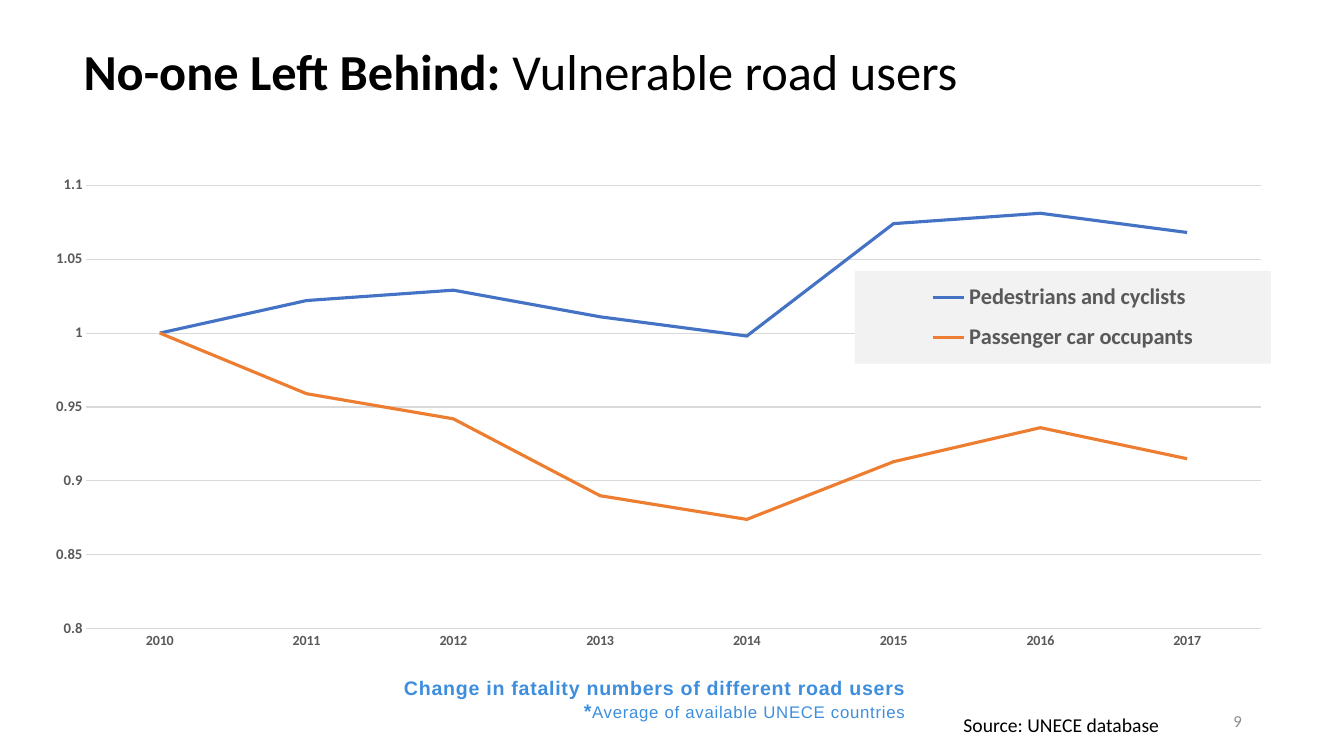
from lxml import etree
from pptx import Presentation
from pptx import util as u
from pptx.chart.data import CategoryChartData
from pptx.dml.color import RGBColor
from pptx.enum import chart as ch
from pptx.enum import text as t
from pptx.oxml.ns import qn

WIDTH, HEIGHT = u.Inches(13.33), u.Inches(7.5)
BLACK, GREY, GRID, BLUE = "000000", "595959", "D9D9D9", "3E8EDE"
YEARS = [str(year) for year in range(2010, 2018)]
ROAD_USERS = [
    ("Pedestrians and cyclists", "4472C4",
     (1, 1.022, 1.029, 1.011, 0.998, 1.074, 1.081, 1.068)),
    ("Passenger car occupants", "ED7D31",
     (1, 0.959, 0.942, 0.89, 0.874, 0.913, 0.936, 0.915)),
]


def color(value):
    return RGBColor.from_string(value)


def place(left, top, width, height):
    """Turn percentages of the slide into lengths."""
    return [int(share * side / 100) for share, side in
            zip((left, top, width, height), (WIDTH, HEIGHT) * 2)]


def set_font(font, size, fill=BLACK, name="Calibri", bold=False):
    font.size, font.name, font.bold = u.Pt(size), name, bold
    font.color.rgb = color(fill)


def add_span(para, text, spacing=0, **style):
    span = para.add_run()
    span.text = text
    set_font(span.font, **style)
    if spacing:
        span.font._element.set("spc", str(int(spacing * 100)))


def add_text(page, area, paragraphs, align="LEFT", anchor="MIDDLE", line=1.0):
    """Each paragraph is a list of (text, format) pairs."""
    frame = page.shapes.add_textbox(*place(*area)).text_frame
    frame.word_wrap = True
    frame.vertical_anchor = t.MSO_ANCHOR[anchor]
    for index, spans in enumerate(paragraphs):
        para = frame.add_paragraph() if index else frame.paragraphs[0]
        para.alignment = t.PP_ALIGN[align]
        para.line_spacing = line
        for text, style in spans:
            add_span(para, text, **style)


def set_layout(element, x, y, w, h, inner=False):
    """Fix the place of a chart part, in shares of the chart."""
    layout = element.find(qn("c:layout"))
    if layout is None:
        layout = etree.Element(qn("c:layout"))
        first = element.find(qn("c:legendPos"))
        element.insert(0 if first is None else 1, layout)
    for child in list(layout):
        layout.remove(child)
    manual = etree.SubElement(layout, qn("c:manualLayout"))
    settings = [("layoutTarget", "inner")] if inner else []
    settings += [("xMode", "edge"), ("yMode", "edge"),
                 ("x", x), ("y", y), ("w", w), ("h", h)]
    for tag, value in settings:
        etree.SubElement(manual, qn("c:" + tag)).set("val", str(value))


def fill_legend(legend, value):
    shape_format = etree.Element(qn("c:spPr"))
    solid = etree.SubElement(shape_format, qn("a:solidFill"))
    etree.SubElement(solid, qn("a:srgbClr")).set("val", value)
    legend.find(qn("c:overlay")).addnext(shape_format)


def set_line(line, value, width):
    line.color.rgb, line.width = color(value), u.Pt(width)


def style_axis(axis, size):
    axis.major_tick_mark = axis.minor_tick_mark = ch.XL_TICK_MARK.NONE
    set_font(axis.tick_labels.font, size, GREY, bold=True)


def add_fatality_chart(page, area):
    data = CategoryChartData()
    data.categories = YEARS
    for name, _, values in ROAD_USERS:
        data.add_series(name, values)
    chart = page.shapes.add_chart(
        ch.XL_CHART_TYPE.LINE, *place(*area), data).chart
    chart.has_title = False
    set_font(chart.font, 10)

    # Lines
    plot = chart.plots[0]
    plot.vary_by_categories = False
    for series, (_, hue, _) in zip(plot.series, ROAD_USERS):
        series.smooth = False
        series.marker.style = ch.XL_MARKER_STYLE.NONE
        set_line(series.format.line, hue, 2.25)
    set_layout(chart._chartSpace.chart.plotArea,
               0.056, 0.037, 0.923, 0.87, inner=True)

    # Axes
    style_axis(chart.category_axis, 10)
    set_line(chart.category_axis.format.line, GRID, 0.75)
    values = chart.value_axis
    style_axis(values, 10.5)
    values.minimum_scale, values.maximum_scale = 0.8, 1.1
    values.major_unit = 0.05
    values.tick_labels.number_format = "General"
    values.tick_labels.number_format_is_linked = False
    values.format.line.fill.background()
    set_line(values.major_gridlines.format.line, GRID, 0.75)

    # Legend
    chart.has_legend = True
    legend = chart.legend
    legend.position = ch.XL_LEGEND_POSITION.BOTTOM
    legend.include_in_layout = True
    set_font(legend.font, 16, GREY, bold=True)
    set_layout(legend._element, 0.66, 0.205, 0.327, 0.182)
    fill_legend(legend._element, "F2F2F2")


def main():
    deck = Presentation()
    deck.slide_width, deck.slide_height = WIDTH, HEIGHT
    page = deck.slides.add_slide(deck.slide_layouts[6])

    # Title
    add_text(page, (5.48, 2, 72.23, 14.53), [[
        ("No-one Left Behind: ", dict(size=36, bold=True)),
        ("Vulnerable road users", dict(size=36))]])

    # Chart with its caption
    add_fatality_chart(page, (1.13, 22, 94.65, 67.47))
    caption = dict(fill=BLUE, name="Arial", spacing=0.5)
    strong = dict(caption, size=14, bold=True)
    add_text(page, (27.83, 87.47, 40.28, 10), [
        [("Change in fatality numbers of different road users", strong)],
        [("*", strong),
         ("Average of available UNECE countries", dict(caption, size=12))],
    ], align="RIGHT")

    # Footer
    add_text(page, (70.95, 94, 18.3, 8.4),
             [[("Source: UNECE database", dict(size=14))]],
             anchor="TOP", line=0.9)
    add_text(page, (70.65, 92.67, 22.5, 5.33),
             [[("9", dict(size=12, fill="8C8C8C"))]], align="RIGHT")

    deck.save("out.pptx")


if __name__ == "__main__":
    main()
